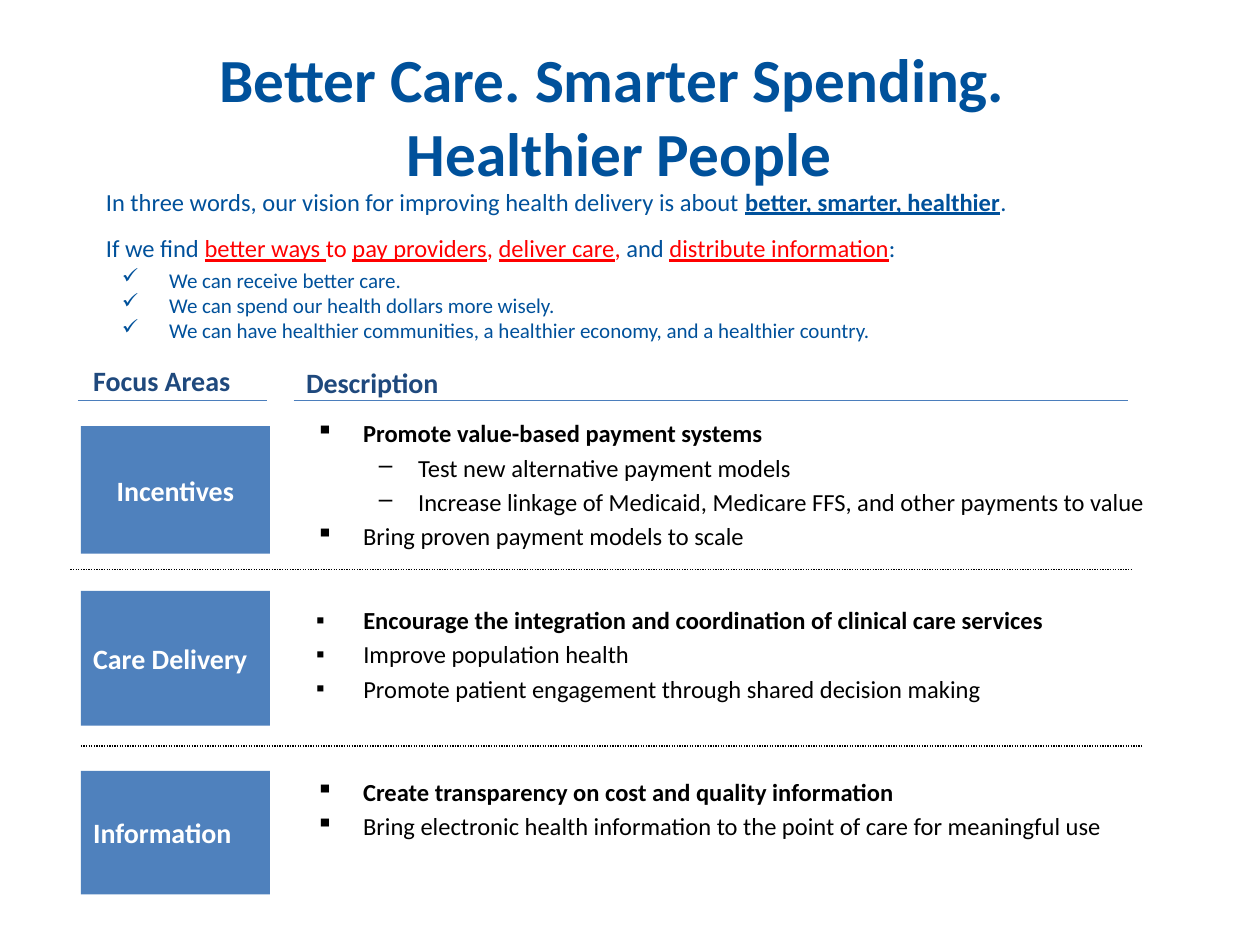
from dataclasses import dataclass

from lxml.etree import SubElement
from pptx import Presentation
from pptx.dml.color import RGBColor
from pptx.enum.dml import MSO_LINE
from pptx.enum.shapes import MSO_CONNECTOR, MSO_SHAPE
from pptx.enum.text import MSO_ANCHOR, MSO_AUTO_SIZE, PP_ALIGN
from pptx.oxml.ns import qn
from pptx.util import Cm, Pt

BLUE = RGBColor(0x00, 0x51, 0x9B)
RED = RGBColor(0xFF, 0x00, 0x00)
NAVY = RGBColor(0x1F, 0x49, 0x7D)
BOX_FILL = RGBColor(0x4F, 0x81, 0xBD)
RULE = RGBColor(0x4B, 0x7E, 0xBC)
BLACK = RGBColor(0, 0, 0)
WHITE = RGBColor(0xFF, 0xFF, 0xFF)

BOX_LEFT, BOX_WIDTH = 1.63, 3.81
TEXT_LEFT = 6.12


@dataclass(frozen=True)
class Run:
    text: str
    size: float
    color: RGBColor
    bold: bool = False
    underline: bool = False


@dataclass(frozen=True)
class Bullet:
    char: str
    margin: float
    hanging: float
    level: int = 0


@dataclass(frozen=True)
class Para:
    runs: tuple[Run, ...]
    align: PP_ALIGN = PP_ALIGN.LEFT
    before: float = 0
    bullet: Bullet | None = None


@dataclass(frozen=True)
class Frame:
    left: float
    top: float
    width: float
    height: float


@dataclass(frozen=True)
class FocusArea:
    name: str
    align: PP_ALIGN
    top: float
    height: float
    frame: Frame
    lines: tuple[Para, ...]


@dataclass(frozen=True)
class Line:
    left: float
    right: float
    y: float
    color: RGBColor
    dash: MSO_LINE | None = None


SQUARE = Bullet("▪", 0.95, 0.95)
DASH = Bullet("–", 2.06, 0.79, 1)
CHECK = Bullet("✓", 0.95, 0.95)


def point(text: str, bullet: Bullet = SQUARE, bold: bool = False) -> Para:
    return Para((Run(text, 14, BLACK, bold),), before=2.8, bullet=bullet)


def intro(text: str, color: RGBColor = BLUE, underline: bool = False,
          bold: bool = False) -> Run:
    return Run(text, 14, color, bold, underline)


HEADING = tuple(Para((Run(text, 35, BLUE, True),), PP_ALIGN.CENTER)
                for text in ("Better Care. Smarter Spending. ", "Healthier People"))

INTRO = (
    Para((intro("In three words, our vision for improving health delivery is about "),
          intro("better, smarter, healthier", underline=True, bold=True),
          intro("."))),
    Para((intro("If we find "),
          intro("better ways ", RED, True), intro("to ", RED),
          intro("pay providers", RED, True), intro(", ", RED),
          intro("deliver care", RED, True), intro(", ", RED),
          intro("and "),
          intro("distribute information", RED, True), intro(":")), before=10),
)

BENEFITS = tuple(Para((Run(text, 12, BLUE),), bullet=CHECK) for text in (
    "We can receive better care.",
    "We can spend our health dollars more wisely.",
    "We can have healthier communities, a healthier economy, and a healthier country.",
))

INCENTIVES = FocusArea("Incentives", PP_ALIGN.CENTER, 8.59, 2.57,
                       Frame(TEXT_LEFT, 8.31, 18.03, 3), (
    point("Promote value-based payment systems", bold=True),
    point("Test new alternative payment models", DASH),
    point("Increase linkage of Medicaid, Medicare FFS, and other payments to value", DASH),
    point("Bring proven payment models to scale")))
CARE_DELIVERY = FocusArea("Care Delivery", PP_ALIGN.LEFT, 11.91, 2.72,
                          Frame(TEXT_LEFT, 12.07, 17.27, 2.29), (
    point("Encourage the integration and coordination of clinical care services", bold=True),
    point("Improve population health"),
    point("Promote patient engagement through shared decision making")))
INFORMATION = FocusArea("Information", PP_ALIGN.LEFT, 15.54, 2.49,
                        Frame(TEXT_LEFT, 15.54, 16.81, 1.57), (
    point("Create transparency on cost and quality information", bold=True),
    point("Bring electronic health information to the point of care for meaningful use")))

COLUMN_HEADS = (("Focus Areas", Frame(1.63, 7.21, 5.08, 0.94)),
                ("Description", Frame(5.92, 7.24, 5.08, 0.94)))

LINES = (Line(1.57, 5.38, 8.08, RULE), Line(5.92, 22.73, 8.08, RULE),
         Line(1.42, 22.81, 11.48, BLACK, MSO_LINE.ROUND_DOT),
         Line(1.63, 23.01, 15.04, BLACK, MSO_LINE.ROUND_DOT))


def place(sp, frame: Frame) -> None:
    for name in ("left", "top", "width", "height"):
        setattr(sp, name, Cm(getattr(frame, name)))


def add_bullet(p, bullet: Bullet) -> None:
    p.level = bullet.level
    pPr = p._p.get_or_add_pPr()
    pPr.set("marL", str(Cm(bullet.margin)))
    pPr.set("indent", str(-Cm(bullet.hanging)))
    SubElement(pPr, qn("a:buChar"), char=bullet.char)


def write(sp, paras: tuple[Para, ...], anchor: MSO_ANCHOR = MSO_ANCHOR.TOP) -> None:
    tf = sp.text_frame
    frame_format = {"word_wrap": True, "auto_size": MSO_AUTO_SIZE.NONE,
                    "vertical_anchor": anchor}
    for name, value in frame_format.items():
        setattr(tf, name, value)
    for i, para in enumerate(paras):
        p = tf.add_paragraph() if i else tf.paragraphs[0]
        p.alignment = para.align
        p.space_before = Pt(para.before)
        if para.bullet:
            add_bullet(p, para.bullet)
        for run in para.runs:
            r = p.add_run()
            r.text = run.text
            run_format = {"name": "Calibri", "size": Pt(run.size),
                          "bold": run.bold, "underline": run.underline}
            for name, value in run_format.items():
                setattr(r.font, name, value)
            r.font.color.rgb = run.color


def add_text(s, frame: Frame, paras: tuple[Para, ...]) -> None:
    sp = s.shapes.add_textbox(0, 0, 0, 0)
    place(sp, frame)
    write(sp, paras)


def add_area_box(s, area: FocusArea) -> None:
    sp = s.shapes.add_shape(MSO_SHAPE.RECTANGLE, Cm(BOX_LEFT), Cm(area.top),
                            Cm(BOX_WIDTH), Cm(area.height))
    sp.shadow.inherit = False
    sp.fill.solid()
    sp.fill.fore_color.rgb = BOX_FILL
    sp.line.fill.background()
    write(sp, (Para((Run(area.name, 16, WHITE, True),), area.align),), MSO_ANCHOR.MIDDLE)


def add_line(s, line: Line) -> None:
    cxn = s.shapes.add_connector(MSO_CONNECTOR.STRAIGHT, Cm(line.left), Cm(line.y),
                                 Cm(line.right), Cm(line.y))
    cxn.line.color.rgb = line.color
    cxn.line.width = Pt(0.75)
    if line.dash:
        cxn.line.dash_style = line.dash
    SubElement(cxn._element.spPr, qn("a:effectLst"))


def main() -> None:
    prs = Presentation()
    prs.slide_width, prs.slide_height = Cm(25.4), Cm(19.05)
    s = prs.slides.add_slide(prs.slide_layouts[1])
    title, body = s.placeholders

    place(title, Frame(1.88, 3.63, 23.52, 1.8))
    write(title, INTRO, MSO_ANCHOR.MIDDLE)
    place(body, CARE_DELIVERY.frame)
    write(body, CARE_DELIVERY.lines)

    for area in (INCENTIVES, CARE_DELIVERY, INFORMATION):
        add_area_box(s, area)
    for area in (INCENTIVES, INFORMATION):
        add_text(s, area.frame, area.lines)
    for text, frame in COLUMN_HEADS:
        add_text(s, frame, (Para((Run(text, 16, NAVY, True),)),))
    for line in LINES:
        add_line(s, line)
    add_text(s, Frame(0.84, 0.71, 23.29, 3.25), HEADING)
    add_text(s, Frame(2.21, 5.26, 16.46, 1.8), BENEFITS)
    prs.save("out.pptx")


if __name__ == "__main__":
    main()
